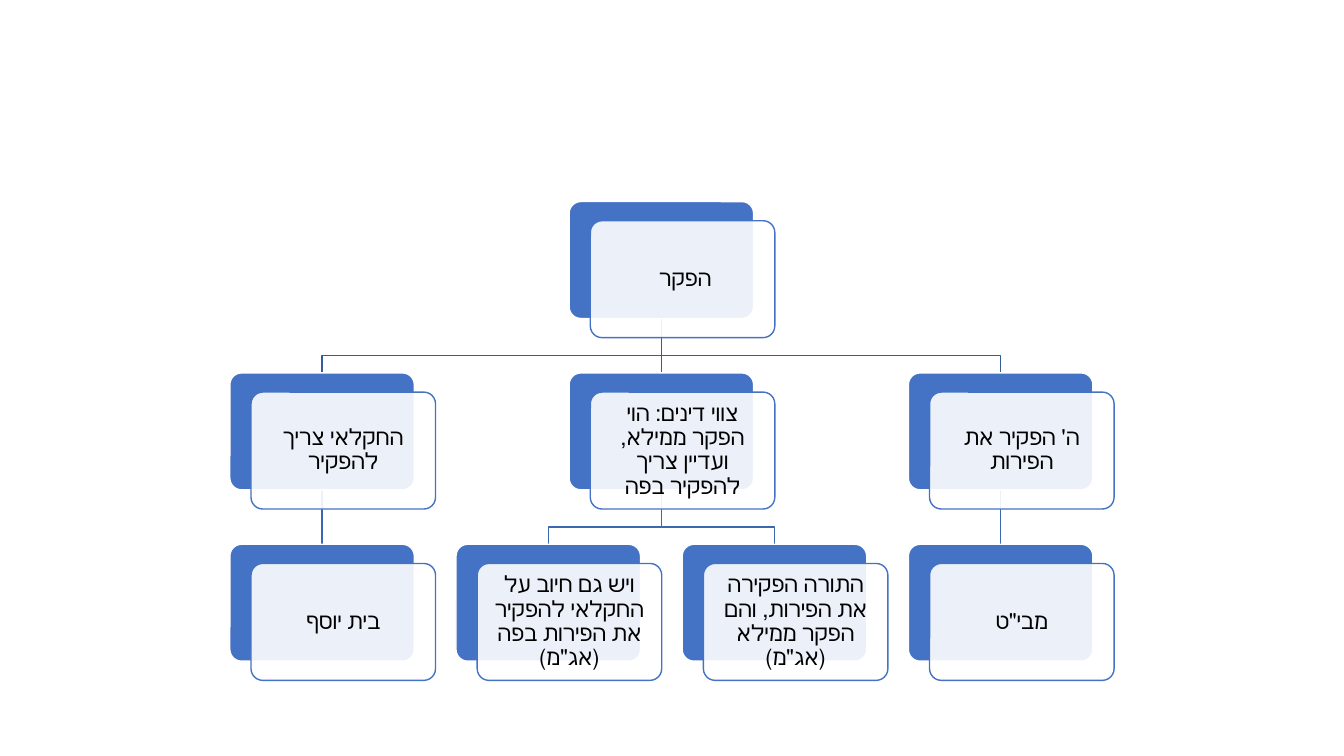
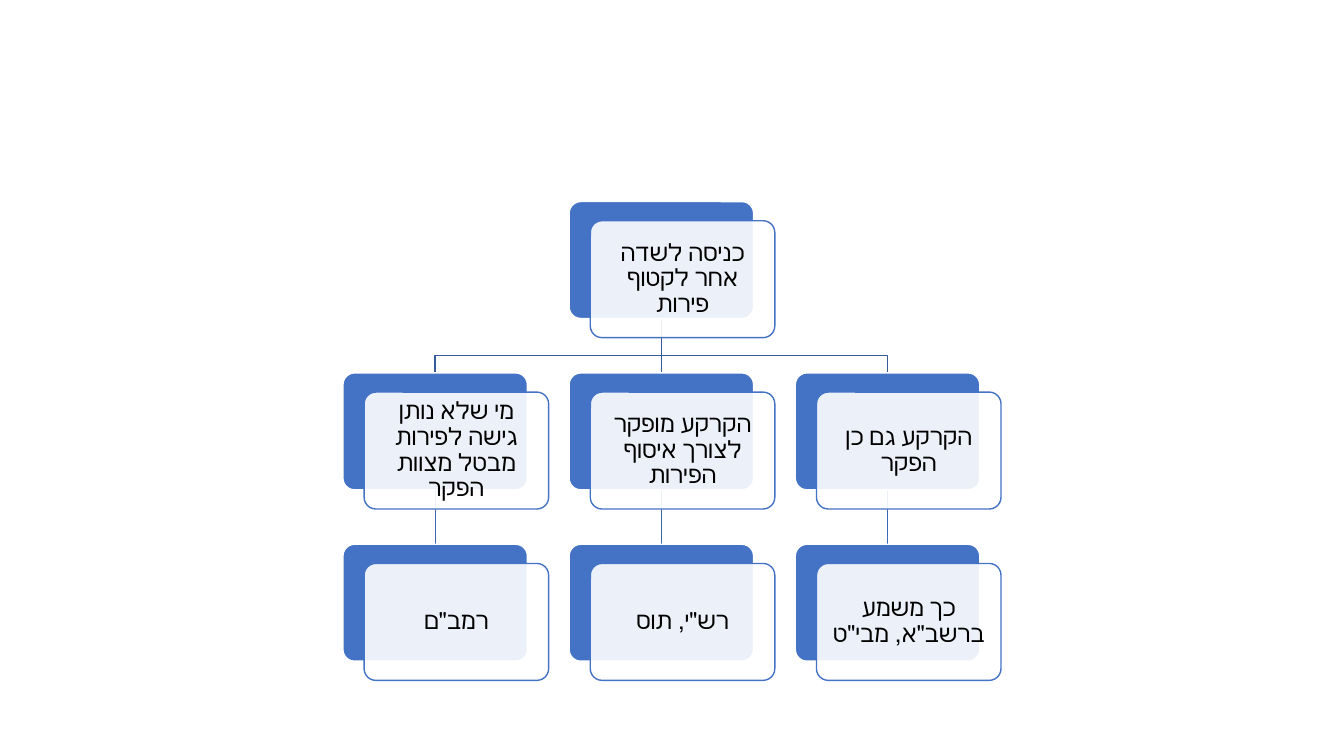
import itertools

import pptx
import pptx.dml.color
import pptx.enum.lang
import pptx.enum.shapes
import pptx.enum.text
import pptx.oxml
import pptx.oxml.ns
import pptx.util

Inches = pptx.util.Inches
Pt = pptx.util.Pt

# Shared look
FONT = "Calibri"
BLUE, WHITE, BLACK = "4472C4", "FFFFFF", "000000"
LINE_COLORS = ["365B9D", "3E67B2"]  # by level of the parent

# Shared grid, centred on the slide
SLIDE_WIDTH, SLIDE_HEIGHT = Inches(13.33), Inches(7.5)
CARD_WIDTH, CARD_HEIGHT = Inches(1.83), Inches(1.16)
OFFSET_X, OFFSET_Y = Inches(0.21), Inches(0.19)
COLUMN_STEP, ROW_STEP = Inches(6.73) // 3, Inches(1.7)
MIDDLE_LEFT, TOP = (SLIDE_WIDTH - CARD_WIDTH - OFFSET_X) // 2, Inches(2)
BEND = Inches(0.37)
INSET = Inches(0.07)

# Each node is (text, children), children from left to right
OWNERLESS = ("הפקר ", [
    ("החקלאי צריך להפקיר", [("בית יוסף", [])]),
    ("צווי דינים: הוי הפקר ממילא, ועדיין צריך להפקיר בפה", [
        ("ויש גם חיוב על החקלאי להפקיר את הפירות בפה (אג\"מ)", []),
        ("התורה הפקירה את הפירות, והם הפקר ממילא (אג\"מ)", []),
    ]),
    ("ה' הפקיר את הפירות", [("מבי\"ט", [])]),
])
ENTERING_FIELD = ("כניסה לשדה אחר לקטוף פירות", [
    ("מי שלא נותן גישה לפירות מבטל מצוות הפקר", [("רמב\"ם", [])]),
    ("הקרקע מופקר לצורך איסוף הפירות", [("רש\"י, תוס", [])]),
    ("הקרקע גם כן הפקר", [("כך משמע ברשב\"א, מבי\"ט", [])]),
])


def color(hex_string):
    return pptx.dml.color.RGBColor.from_string(hex_string)


def add_xml(parent, tag, **attributes):
    element = pptx.oxml.parse_xml(f"<{tag} {pptx.oxml.ns.nsdecls('a')}/>")
    for name, value in attributes.items():
        element.set(name, value)
    parent.append(element)


def style_line(shape, hex_string):
    shape.line.color.rgb = color(hex_string)
    shape.line.width = Pt(1)


def add_card(slide, left, top, fill, line):
    shape = slide.shapes.add_shape(
        pptx.enum.shapes.MSO_SHAPE.ROUNDED_RECTANGLE, left, top, CARD_WIDTH, CARD_HEIGHT)
    shape.adjustments[0] = 0.1
    shape.shadow.inherit = False
    shape.fill.solid()
    shape.fill.fore_color.rgb = color(fill)
    style_line(shape, line)
    return shape


def set_text(shape, text, size):
    frame = shape.text_frame
    frame.text = text
    frame.word_wrap = True
    frame.vertical_anchor = pptx.enum.text.MSO_ANCHOR.MIDDLE
    frame.margin_left = frame.margin_right = INSET
    frame.margin_top = frame.margin_bottom = INSET
    paragraph = frame.paragraphs[0]
    paragraph.alignment = pptx.enum.text.PP_ALIGN.CENTER
    paragraph.line_spacing = 0.9
    paragraph._p.get_or_add_pPr().set("rtl", "1")
    font = paragraph.runs[0].font
    font.size = Pt(size)
    font.name = FONT
    font.color.rgb = color(BLACK)
    font.language_id = pptx.enum.lang.MSO_LANGUAGE_ID.HEBREW


def add_node(slide, left, top, text, size):
    """A blue card with a translucent text card over it; returns the blue one."""
    back = add_card(slide, left, top, BLUE, WHITE)
    front = add_card(slide, left + OFFSET_X, top + OFFSET_Y, WHITE, BLUE)
    add_xml(front.fill._xPr.find(".//" + pptx.oxml.ns.qn("a:srgbClr")), "a:alpha", val="90000")
    set_text(front, text, size)
    return back


def add_link(slide, parent, child, hex_string):
    start_x = parent.left + CARD_WIDTH // 2
    end_x = child.left + CARD_WIDTH // 2
    start_y, end_y = parent.top + CARD_HEIGHT, child.top
    if abs(start_x - end_x) < Inches(0.01):
        link = slide.shapes.add_connector(
            pptx.enum.shapes.MSO_CONNECTOR.STRAIGHT, start_x, start_y, end_x, end_y)
        link.begin_connect(parent, 2)
        link.end_connect(child, 0)
        style_line(link, hex_string)
        add_xml(link._element.spPr, "a:effectLst")
    else:
        bend_y = start_y + BEND
        builder = slide.shapes.build_freeform(start_x, start_y)
        builder.add_line_segments(
            [(start_x, bend_y), (end_x, bend_y), (end_x, end_y)], close=False)
        link = builder.convert_to_shape()
        link.fill.background()
        style_line(link, hex_string)
        link.shadow.inherit = False
    # Links lie behind all cards
    slide.shapes._spTree.insert(2, link._element)


def count_leaves(node):
    return sum(map(count_leaves, node[1])) or 1


def add_branch(slide, node, level, leaf_lefts, size):
    """Leaves take the next column; a parent is centred over its children."""
    text, children = node
    cards = [add_branch(slide, child, level + 1, leaf_lefts, size) for child in children]
    left = (cards[0].left + cards[-1].left) // 2 if cards else next(leaf_lefts)
    card = add_node(slide, left, TOP + level * ROW_STEP, text, size)
    for child_card in cards:
        add_link(slide, card, child_card, LINE_COLORS[level])
    return card


def add_tree_slide(presentation, root, size):
    slide = presentation.slides.add_slide(presentation.slide_layouts[6])
    first_left = MIDDLE_LEFT - (count_leaves(root) - 1) * COLUMN_STEP // 2
    add_branch(slide, root, 0, itertools.count(first_left, COLUMN_STEP), size)


def main():
    presentation = pptx.Presentation()
    presentation.slide_width = SLIDE_WIDTH
    presentation.slide_height = SLIDE_HEIGHT
    add_tree_slide(presentation, OWNERLESS, 16)
    add_tree_slide(presentation, ENTERING_FIELD, 17)
    presentation.save("out.pptx")


if __name__ == "__main__":
    main()
